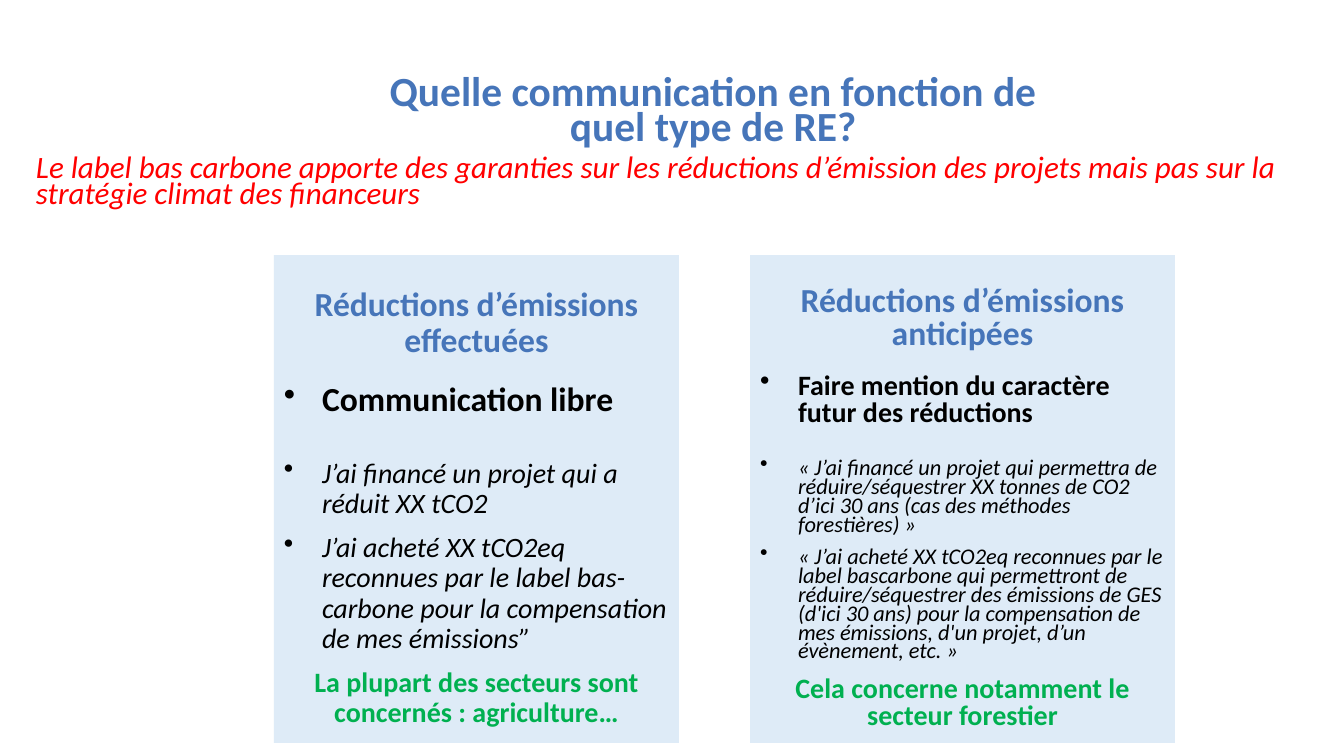
import pptx
import pptx.util
import pptx.dml.color
import pptx.enum.shapes
import pptx.enum.text
import lxml.etree

ALIGN = pptx.enum.text.PP_ALIGN
ANCHOR = pptx.enum.text.MSO_ANCHOR
BLUE, RED, GREEN, BLACK = "4675B9", "FF0000", "00B050", "000000"
WHITE, PALE = "FFFFFF", "DEEBF7"


def px(size):
    return pptx.util.Emu(round(size * 914400 / 100.8))


def hue(code):
    return pptx.dml.color.RGBColor.from_string(code)


class Deck:
    font = "Calibri"
    hang = 38

    def __init__(self):
        self.prs = pptx.Presentation()
        self.prs.slide_width = px(1344)
        self.prs.slide_height = px(756)
        self.slide = self.prs.slides.add_slide(self.prs.slide_layouts[6])

    def frame(self, shape, top=5, anchor=ANCHOR.TOP):
        frame = shape.text_frame
        frame.word_wrap = True
        frame.vertical_anchor = anchor
        frame.margin_left = frame.margin_right = px(10)
        frame.margin_top, frame.margin_bottom = px(top), px(5)
        return frame

    def panel(self, box, fill, top=5, anchor=ANCHOR.TOP):
        kind = pptx.enum.shapes.MSO_SHAPE.RECTANGLE
        shape = self.slide.shapes.add_shape(kind, *map(px, box))
        shape.shadow.inherit = False
        shape.fill.solid()
        shape.fill.fore_color.rgb = hue(fill)
        shape.line.fill.background()
        return self.frame(shape, top, anchor)

    def label(self, box):
        return self.frame(self.slide.shapes.add_textbox(*map(px, box)))

    def para(self, frame, text, size, color, line, before=10, after=0,
             bold=False, italic=False, align=ALIGN.LEFT, bullet=False):
        first = not frame.text
        para = frame.paragraphs[0] if first else frame.add_paragraph()
        para.text = text
        para.alignment = align
        para.line_spacing = line
        para.space_before = pptx.util.Pt(0 if first else before)
        para.space_after = pptx.util.Pt(after)
        if bullet:
            self.bullet(para)
        for run in para.runs:
            font = run.font
            font.name, font.size = self.font, pptx.util.Pt(size)
            font.bold, font.italic = bold, italic
            font.color.rgb = hue(color)

    def bullet(self, para):
        props = para._p.get_or_add_pPr()
        props.set("marL", str(px(self.hang)))
        props.set("indent", str(-px(self.hang)))
        tag = pptx.oxml.ns.qn("a:buChar")
        lxml.etree.SubElement(props, tag).set("char", "•")

    def column(self, box, head, lead, lead_size, gap, quotes, size, tight,
               close, line):
        frame = self.panel(box, PALE, top=32)
        self.para(frame, head, 24, BLUE, line, after=6, bold=True,
                  align=ALIGN.CENTER)
        self.para(frame, lead, lead_size, BLACK, line, bold=True, bullet=True)
        for spot, quote in enumerate(quotes):
            self.para(frame, quote, size, BLACK, tight, italic=True,
                      before=10 if spot else gap, bullet=True)
        self.para(frame, close, 20, GREEN, line, bold=True,
                  align=ALIGN.CENTER)


def main():
    deck = Deck()
    title = deck.panel((347, 69, 733, 84), WHITE, anchor=ANCHOR.BOTTOM)
    deck.para(title, "Quelle communication en fonction de quel type de RE?",
              29.6, BLUE, 0.7, bold=True, align=ALIGN.CENTER)
    note = deck.label((26, 153, 1305, 67))
    deck.para(note, "Le label bas carbone apporte des garanties sur les "
              "réductions d’émission des projets mais pas sur la stratégie "
              "climat des financeurs", 22.2, RED, 0.7, italic=True)
    deck.column(
        (274, 255, 405, 488), "Réductions d’émissions effectuées",
        "Communication libre", 24, 29,
        ["J’ai financé un projet qui a réduit XX tCO2",
         "J’ai acheté XX tCO2eq reconnues par le label bas-carbone pour la "
         "compensation de mes émissions”"],
        20, 0.9, "La plupart des secteurs sont concernés : agriculture…", 0.9)
    deck.column(
        (750, 255, 425, 488), "Réductions d’émissions anticipées",
        "Faire mention du caractère futur des réductions", 20, 23.4,
        ["« J’ai financé un projet qui permettra de réduire/séquestrer XX "
         "tonnes de CO2 d’ici 30 ans (cas des méthodes forestières) »",
         "« J’ai acheté XX tCO2eq reconnues par le label bascarbone qui "
         "permettront de réduire/séquestrer des émissions de GES (d'ici 30 "
         "ans) pour la compensation de mes émissions, d'un projet, d’un "
         "évènement, etc. »"],
        16, 0.7, "Cela concerne notamment le secteur forestier", 0.8)
    deck.prs.save("out.pptx")


if __name__ == "__main__":
    main()
